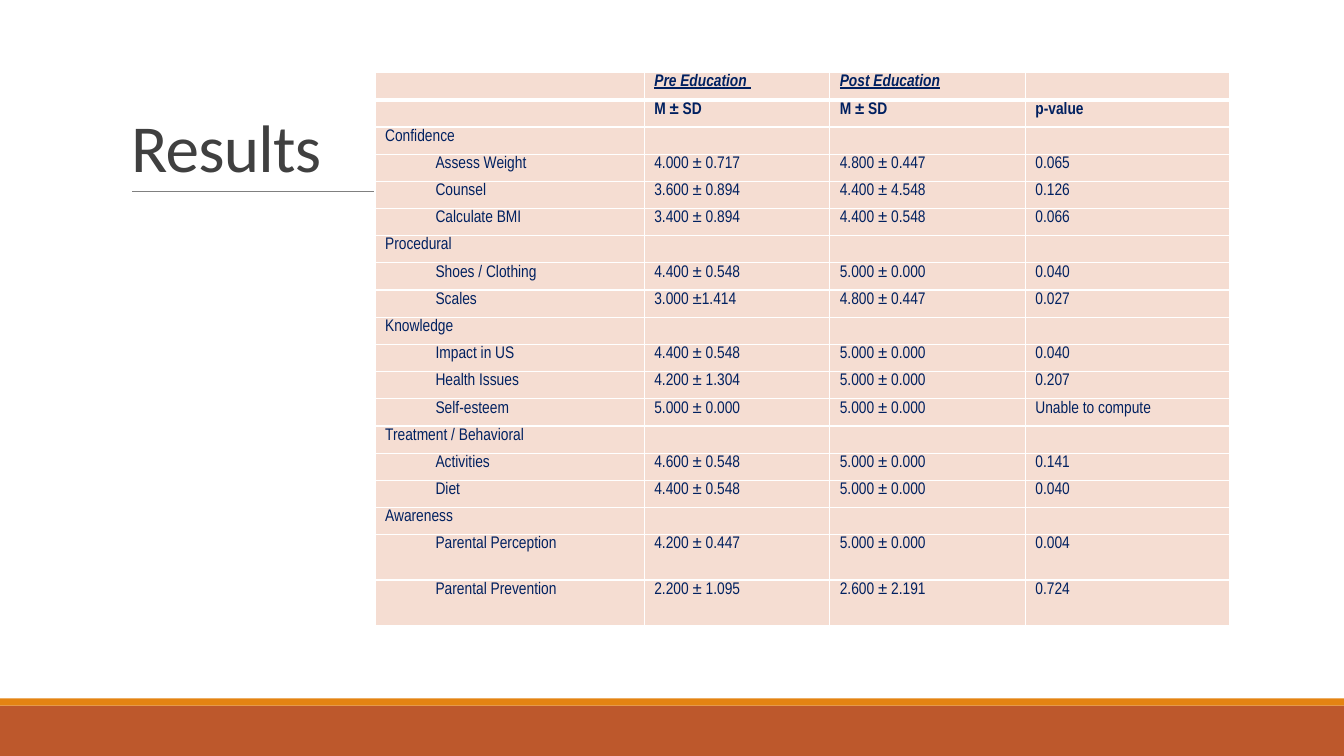
import pptx
import pptx.util
import pptx.dml.color
import pptx.enum.shapes
import pptx.enum.text
import pptx.oxml.ns
import lxml.etree

Inches = pptx.util.Inches
COLORS = {"rust": "BD582C", "orange": "E48312", "rule": "808080", "title": "404040",
          "navy": "002060", "peach": "F5DDD2", "white": "FFFFFF"}
COLUMN_WIDTHS = [2.67, 1.84, 1.94, 2.03]
HEADINGS = [["", "Pre Education ", "Post Education", ""],
            ["", "M ± SD", "M ± SD", "p-value"]]
SECTIONS = {
    "Confidence": [
        ["Assess Weight", "4.000 ± 0.717", "4.800 ± 0.447", "0.065"],
        ["Counsel", "3.600 ± 0.894", "4.400 ± 4.548", "0.126"],
        ["Calculate BMI", "3.400 ± 0.894", "4.400 ± 0.548", "0.066"]],
    "Procedural": [
        ["Shoes / Clothing", "4.400 ± 0.548", "5.000 ± 0.000", "0.040"],
        ["Scales", "3.000 ±1.414", "4.800 ± 0.447", "0.027"]],
    "Knowledge": [
        ["Impact in US", "4.400 ± 0.548", "5.000 ± 0.000", "0.040"],
        ["Health Issues", "4.200 ± 1.304", "5.000 ± 0.000", "0.207"],
        ["Self-esteem", "5.000 ± 0.000", "5.000 ± 0.000", "Unable to compute"]],
    "Treatment / Behavioral": [
        ["Activities", "4.600 ± 0.548", "5.000 ± 0.000", "0.141"],
        ["Diet", "4.400 ± 0.548", "5.000 ± 0.000", "0.040"]],
    "Awareness": [
        ["Parental Perception", "4.200 ± 0.447", "5.000 ± 0.000", "0.004"],
        ["Parental Prevention", "2.200 ± 1.095", "2.600 ± 2.191", "0.724"]],
}


def color(name):
    return pptx.dml.color.RGBColor.from_string(COLORS[name])


def add_xml(parent, tag, **attributes):
    return lxml.etree.SubElement(parent, pptx.oxml.ns.qn(tag), attributes)


class ResultsPage:
    """Holds the slide and the styles of its elements."""

    def __init__(self, deck):
        self.page = deck.slides.add_slide(deck.slide_layouts[5])
        self.shapes = self.page.shapes

    def title(self, text, left, top, width, height):
        box = self.shapes.title
        box.left, box.top, box.width, box.height = map(Inches, (left, top, width, height))
        frame = box.text_frame
        frame.auto_size = pptx.enum.text.MSO_AUTO_SIZE.NONE
        frame.vertical_anchor = pptx.enum.text.MSO_ANCHOR.BOTTOM
        para = frame.paragraphs[0]
        para.alignment = pptx.enum.text.PP_ALIGN.LEFT
        para.line_spacing = 0.85
        span = self.span(para, text, "Calibri", 48, "title")
        span.font._element.set("spc", "-50")

    def span(self, para, text, font, size, fill):
        span = para.add_run()
        span.text = text
        span.font.name = font
        span.font.size = pptx.util.Pt(size)
        span.font.color.rgb = color(fill)
        return span

    def bar(self, top, height, fill):
        bar = self.shapes.add_shape(pptx.enum.shapes.MSO_SHAPE.RECTANGLE,
                                    0, Inches(top), Inches(13.33), Inches(height))
        bar.shadow.inherit = False
        bar.fill.solid()
        bar.fill.fore_color.rgb = color(fill)
        bar.line.fill.background()

    def rule(self, left, right, top):
        rule = self.shapes.add_connector(pptx.enum.shapes.MSO_CONNECTOR.STRAIGHT,
                                         Inches(left), Inches(top), Inches(right), Inches(top))
        rule.line.color.rgb = color("rule")
        rule.line.width = pptx.util.Pt(0.5)
        add_xml(rule._element.spPr, "a:effectLst")

    def borders(self, cell, top, bottom):
        properties = cell._tc.get_or_add_tcPr()
        for side, width in (("L", 1), ("R", 1), ("T", top), ("B", bottom)):
            line = add_xml(properties, f"a:ln{side}", w=str(pptx.util.Pt(width)))
            add_xml(add_xml(line, "a:solidFill"), "a:srgbClr", val=COLORS["white"])

    def cell(self, cell, text, row, indented):
        self.borders(cell, 3 if row == 1 else 1, 3 if row == 0 else 1)
        cell.fill.solid()
        cell.fill.fore_color.rgb = color("peach")
        cell.margin_top = cell.margin_bottom = Inches(0.02)
        para = cell.text_frame.paragraphs[0]
        if not text:
            add_xml(para._p, "a:endParaRPr", sz="1200")
            return
        if indented:
            para.level = 1
            para._p.get_or_add_pPr().set("marL", str(Inches(0.5)))
        span = self.span(para, text, "Arial Narrow", 12, "navy")
        span.font.bold = row < 2
        span.font.italic = span.font.underline = row == 0

    def table(self, left, top):
        rows = [(values, False) for values in HEADINGS]
        for section, items in SECTIONS.items():
            rows.append(([section, "", "", ""], False))
            rows += [(values, True) for values in items]
        heights = [0.27] * (len(rows) - 2) + [0.45] * 2
        table = self.shapes.add_table(len(rows), len(COLUMN_WIDTHS), Inches(left), Inches(top),
                                      Inches(sum(COLUMN_WIDTHS)), Inches(sum(heights))).table
        table.first_row = table.horz_banding = False
        for column, width in zip(table.columns, COLUMN_WIDTHS):
            column.width = Inches(width)
        for row, (values, is_item) in enumerate(rows):
            table.rows[row].height = Inches(heights[row])
            for column, text in enumerate(values):
                self.cell(table.cell(row, column), text, row, is_item and column == 0)


def main():
    deck = pptx.Presentation()
    deck.slide_width, deck.slide_height = Inches(13.33), Inches(7.5)
    results = ResultsPage(deck)
    results.bar(7, 0.5, "rust")
    results.bar(6.93, 0.07, "orange")
    results.rule(1.31, 12.21, 1.9)
    results.title("Results", 1.2, 0.31, 11, 1.59)
    results.table(3.72, 0.72)
    deck.save("out.pptx")


if __name__ == "__main__":
    main()
